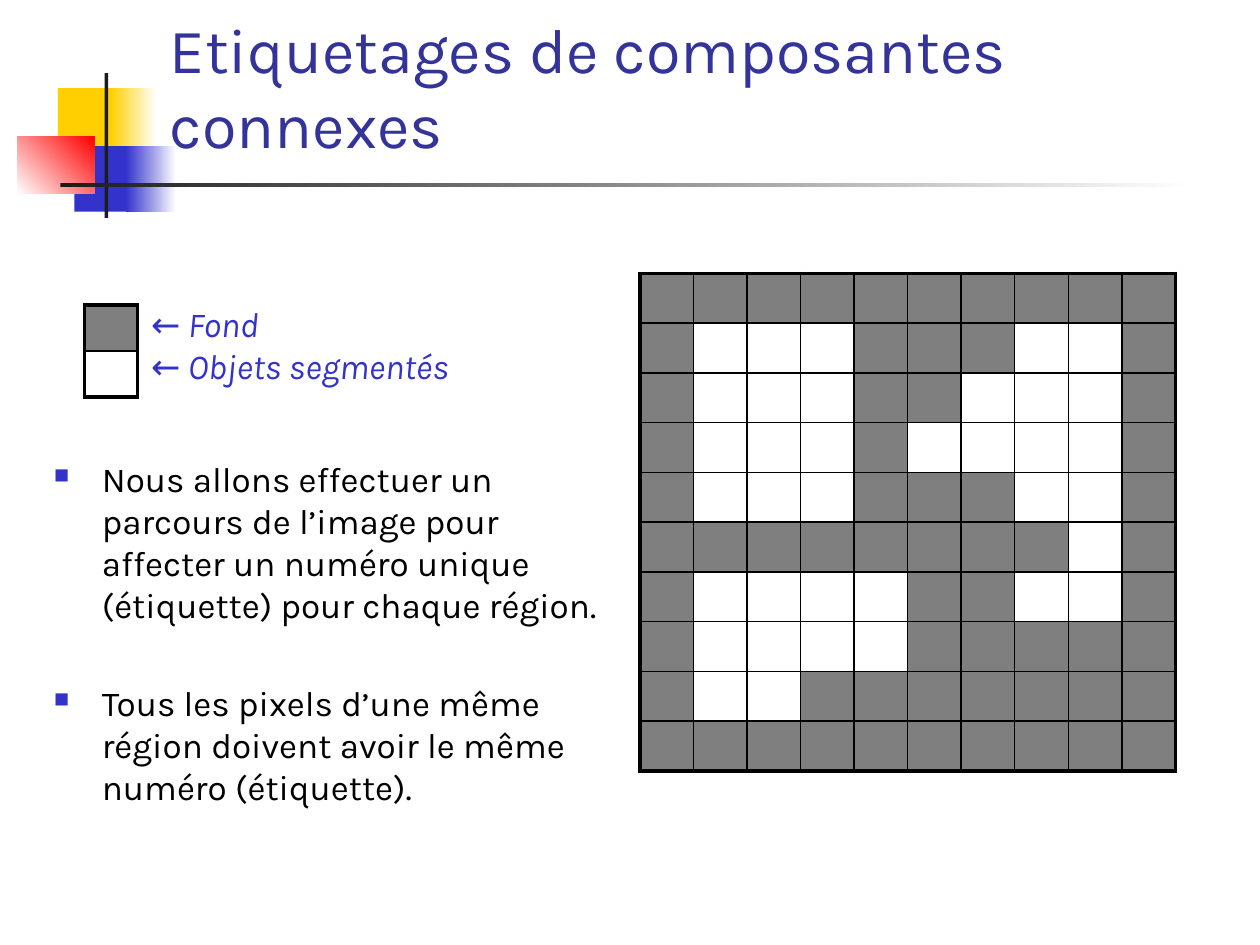
from lxml import etree
from pptx import Presentation
from pptx.dml.color import RGBColor
from pptx.enum.shapes import MSO_SHAPE
from pptx.enum.text import MSO_ANCHOR
from pptx.oxml import parse_xml
from pptx.oxml.ns import nsdecls, qn
from pptx.util import Inches, Pt

RECTANGLE = MSO_SHAPE.RECTANGLE
BOTTOM = MSO_ANCHOR.BOTTOM
TOP = MSO_ANCHOR.TOP
FONT = "Karla"
BLUE, BLACK, WHITE, INK = "3333CC", "000000", "FFFFFF", "1C1C1C"
YELLOW, RED, TITLE_BLUE = "FFCF01", "FF0000", "333399"
rgb = RGBColor.from_string

deck = Presentation()
deck.slide_width, deck.slide_height = Inches(10), Inches(7.5)
slide = deck.slides.add_slide(deck.slide_layouts[6])
COLUMN, ROW = deck.slide_width / 100, deck.slide_height / 75


def grid(left, top, width, height):
    return [round(n * unit) for n, unit in
            zip((left, top, width, height), (COLUMN, ROW, COLUMN, ROW))]


def write(area, paragraphs, size, color, anchor=TOP, italic=False):
    frame = slide.shapes.add_textbox(*grid(*area)).text_frame
    frame.word_wrap = True
    frame.vertical_anchor = anchor
    for i, words in enumerate(paragraphs):
        paragraph = frame.paragraphs[0] if i == 0 else frame.add_paragraph()
        run = paragraph.add_run()
        run.text = words
        run.font.name, run.font.size, run.font.italic = FONT, Pt(size), italic
        run.font.color.rgb = rgb(color)
    return frame


ornaments = [
    ((4.6, 7, 4.8, 5.2), [YELLOW], 0),
    ((8.8, 7, 3.6, 5.2), [YELLOW, WHITE], 0),
    ((5.9, 11.6, 4.6, 5.2), [BLUE], 0),
    ((10, 11.6, 4, 5.2), [BLUE, WHITE], 0),
    ((1.4, 10.8, 6.1, 4.6), [WHITE, RED], 45),
    ((8.3, 5.8, 0.3, 11.5), [INK], 0),
    ((4.8, 14.5, 90, 0.35), [INK, WHITE], 0),
]
for area, colors, angle in ornaments:
    ornament = slide.shapes.add_shape(RECTANGLE, *grid(*area))
    ornament.shadow.inherit = False
    ornament.line.fill.background()
    if len(colors) == 1:
        ornament.fill.solid()
        ornament.fill.fore_color.rgb = rgb(colors[0])
    else:
        ornament.fill.gradient()
        ornament.fill.gradient_angle = angle
        for stop, color in zip(ornament.fill.gradient_stops, colors):
            stop.color.rgb = rgb(color)

write((12.5, 3.3, 87.5, 10), ["Etiquetages de composantes connexes"],
      36, TITLE_BLUE, BOTTOM)

segmented_image = [
    "##########",
    "#...###..#",
    "#...##...#",
    "#...#....#",
    "#...###..#",
    "########.#",
    "#....##..#",
    "#....#####",
    "#..#######",
    "##########",
]
legend_key = ["#", "."]
for pixels, area in ((segmented_image, (50.8, 21.7, 42.5, 39.5)),
                     (legend_key, (6.7, 24.2, 4.2, 7.3))):
    last_row, last_column = len(pixels) - 1, len(pixels[0]) - 1
    table = slide.shapes.add_table(last_row + 1, last_column + 1, *grid(*area)).table
    table.first_row = table.horz_banding = False
    for r, line in enumerate(pixels):
        for c, pixel in enumerate(line):
            cell = table.cell(r, c)
            cell.margin_left = cell.margin_right = cell.margin_top = cell.margin_bottom = 0
            properties = cell._tc.get_or_add_tcPr()
            outer_sides = (("L", c == 0), ("R", c == last_column),
                           ("T", r == 0), ("B", r == last_row))
            for side, outer in outer_sides:
                properties.append(parse_xml(
                    f'<a:ln{side} {nsdecls("a")} w="{Pt(2.25 if outer else 1)}">'
                    f'<a:solidFill><a:srgbClr val="{BLACK}"/></a:solidFill></a:ln{side}>'))
            if pixel == "#":
                cell.fill.solid()
                cell.fill.fore_color.rgb = rgb(BLACK)
                shade = properties.find(qn("a:solidFill"))[0]
                etree.SubElement(shade, qn("a:alpha"), val="50000")
            else:
                cell.fill.background()

write((11, 23.5, 29.2, 7.7), ["← Fond", "← Objets segmentés"], 20, BLUE, italic=True)

method = write((3.3, 35.8, 47.5, 34.2), [
    "Nous allons effectuer un parcours de l’image pour affecter un numéro unique "
    "(étiquette) pour chaque région.",
    "Tous les pixels d’une même région doivent avoir le même numéro (étiquette).",
], 20, BLACK)
for step, gap in zip(method.paragraphs, (4, 32)):
    step.space_before = Pt(gap)
    indent = step._p.get_or_add_pPr()
    indent.set("marL", str(Inches(0.38)))
    indent.set("indent", str(-Inches(0.38)))
    for bullet in (f'<a:buClr {nsdecls("a")}><a:srgbClr val="{BLUE}"/></a:buClr>',
                   f'<a:buSzPct {nsdecls("a")} val="60000"/>',
                   f'<a:buChar {nsdecls("a")} char="■"/>'):
        indent.append(parse_xml(bullet))

deck.save("out.pptx")
